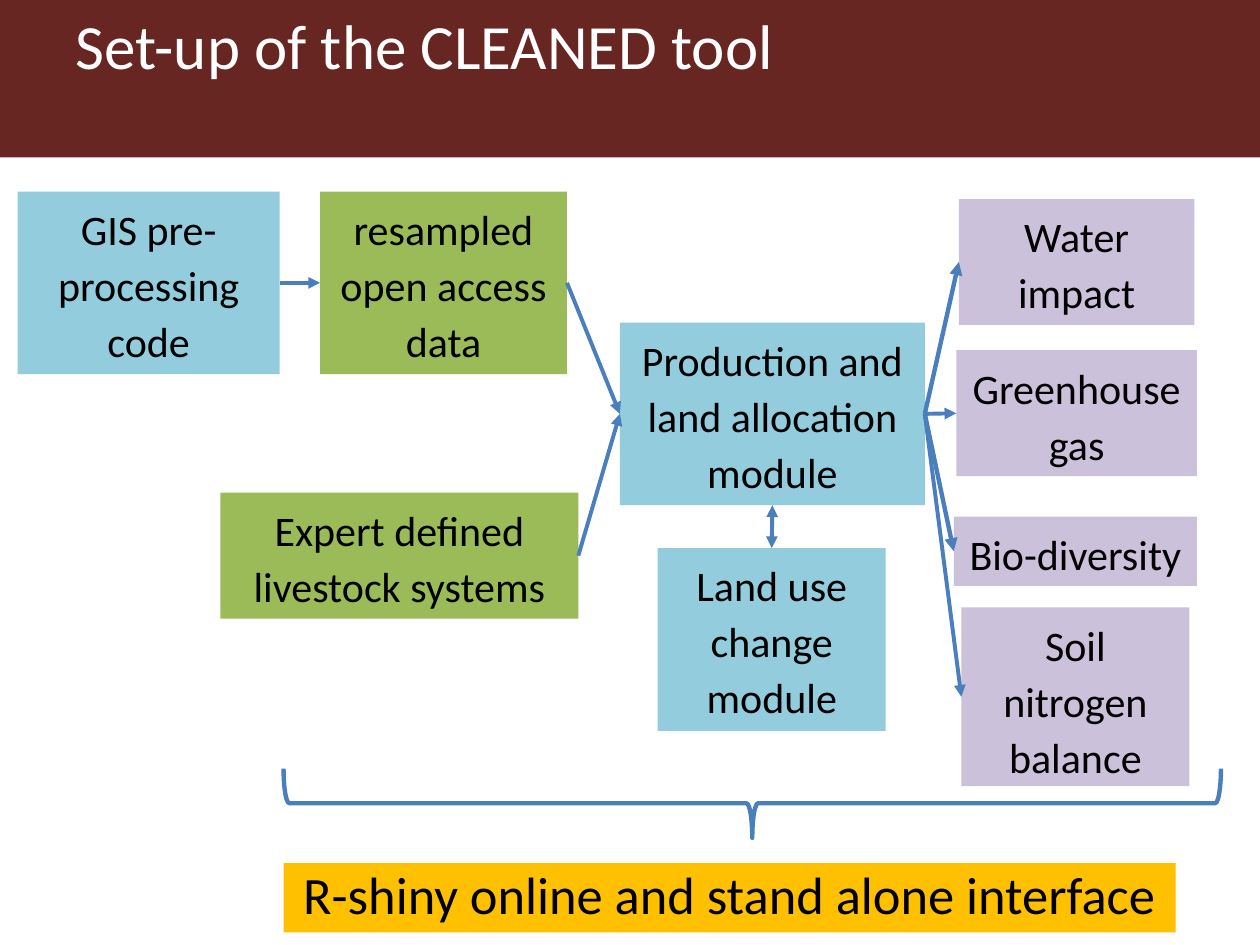
from lxml.etree import SubElement
from pptx import Presentation
from pptx.dml.color import RGBColor
from pptx.enum.shapes import MSO_CONNECTOR as Connector, MSO_SHAPE as Shape
from pptx.enum.text import MSO_ANCHOR as Anchor, PP_ALIGN as Align
from pptx.oxml.ns import qn
from pptx.util import Pt

SCALE = 9144  # EMU per px, at 100 px to the inch
FONT = "Calibri"
MAROON, BLUE, GREEN = "682622", "93CDDD", "9BBB59"
LILAC, AMBER, LINE = "CCC1DA", "FFC000", "4B7EBC"
TOP, LEFT, BOTTOM, RIGHT = range(4)  # connection sites of a rectangle


def px(*lengths):
    return [round(length * SCALE) for length in lengths]


def color(hex_string):
    return RGBColor.from_string(hex_string)


def style_para(para, size, hex_string, align):
    para.alignment = align
    para.font.name = FONT
    para.font.size = Pt(size)
    para.font.color.rgb = color(hex_string)


def add_block(page, box, fill):
    block = page.shapes.add_shape(Shape.RECTANGLE, *px(*box))
    block.shadow.inherit = False
    block.fill.solid()
    block.fill.fore_color.rgb = color(fill)
    block.line.fill.background()
    return block


def add_label(page, box, fill, text, size=24):
    block = add_block(page, box, fill)
    frame = block.text_frame
    frame.word_wrap = True
    frame.vertical_anchor = Anchor.TOP
    frame.text = text
    para = frame.paragraphs[0]
    para.line_spacing = Pt(32)
    style_para(para, size, "000000", Align.CENTER)
    return block


def add_arrow(page, start, start_site, end, end_site, width=2.25, both_ends=False):
    arrow = page.shapes.add_connector(Connector.STRAIGHT, 0, 0, 0, 0)
    arrow.begin_connect(start, start_site)
    arrow.end_connect(end, end_site)
    arrow.line.color.rgb = color(LINE)
    arrow.line.width = Pt(width)
    outline = arrow.line._get_or_add_ln()
    for tag in ["a:headEnd", "a:tailEnd"] if both_ends else ["a:tailEnd"]:
        SubElement(outline, qn(tag), type="triangle")
    SubElement(arrow._element.spPr, qn("a:effectLst"))


def add_header(page, box):
    left, top, width, height = box
    band = add_block(page, box, MAROON)
    title = page.shapes.title
    title._element.addprevious(band._element)
    title.left, title.top, title.width, title.height = px(
        left + 50, top, width - 100, height)
    title.text_frame.text = "Set-up of the CLEANED tool"
    title.text_frame.vertical_anchor = Anchor.TOP
    style_para(title.text_frame.paragraphs[0], 36, "FFFFFF", Align.LEFT)


def add_flow(page, box):
    """Inputs on the left, modules in the middle, impacts on the right."""
    x, y = box[:2]

    def label(left, top, width, height, fill, text):
        return add_label(page, (x + left, y + top, width, height), fill, text)

    code = label(0, 0, 208, 145, BLUE, "GIS pre-processing code")
    data = label(240, 0, 196, 145, GREEN, "resampled open access data")
    systems = label(161, 239, 284, 100, GREEN, "Expert defined livestock systems")
    production = label(478, 104, 242, 145, BLUE,
                       "Production and land allocation module")
    land_use = label(508, 283, 181, 145, BLUE, "Land use change module")
    impacts = [
        (label(747, 6, 187, 100, LILAC, "Water impact"), 2.5),
        (label(745, 126, 191, 100, LILAC, "Greenhouse gas"), 2.25),
        (label(743, 258, 193, 55, LILAC, "Bio-diversity"), 2.5),
        (label(749, 330, 181, 142, LILAC, "Soil nitrogen balance"), 2.25),
    ]

    add_arrow(page, code, RIGHT, data, LEFT)
    for source in (data, systems):
        add_arrow(page, source, RIGHT, production, LEFT)
    add_arrow(page, production, BOTTOM, land_use, TOP, both_ends=True)
    for impact, width in impacts:
        add_arrow(page, production, RIGHT, impact, LEFT, width)


def add_interface(page, box):
    """A brace that gathers the flow, above the interface label."""
    left, top, width, height = box
    depth = 55
    brace = page.shapes.add_shape(Shape.RIGHT_BRACE, *px(
        left + (width - depth) / 2, top + (depth - width) / 2, depth, width))
    brace.rotation = 90
    brace.shadow.inherit = False
    brace.fill.background()
    brace.line.color.rgb = color(LINE)
    brace.line.width = Pt(2.5)
    add_label(page, (left, top + height - 55, 708, 55), AMBER,
              "R-shiny online and stand alone interface", 30)


def main():
    deck = Presentation()
    deck.slide_width, deck.slide_height = px(1000, 750)
    page = deck.slides.add_slide(deck.slide_layouts.get_by_name("Title Only"))
    add_header(page, (0, 0, 1000, 125))
    add_flow(page, (14, 152, 936, 472))
    add_interface(page, (225, 610, 744, 130))
    deck.save("out.pptx")


if __name__ == "__main__":
    main()
